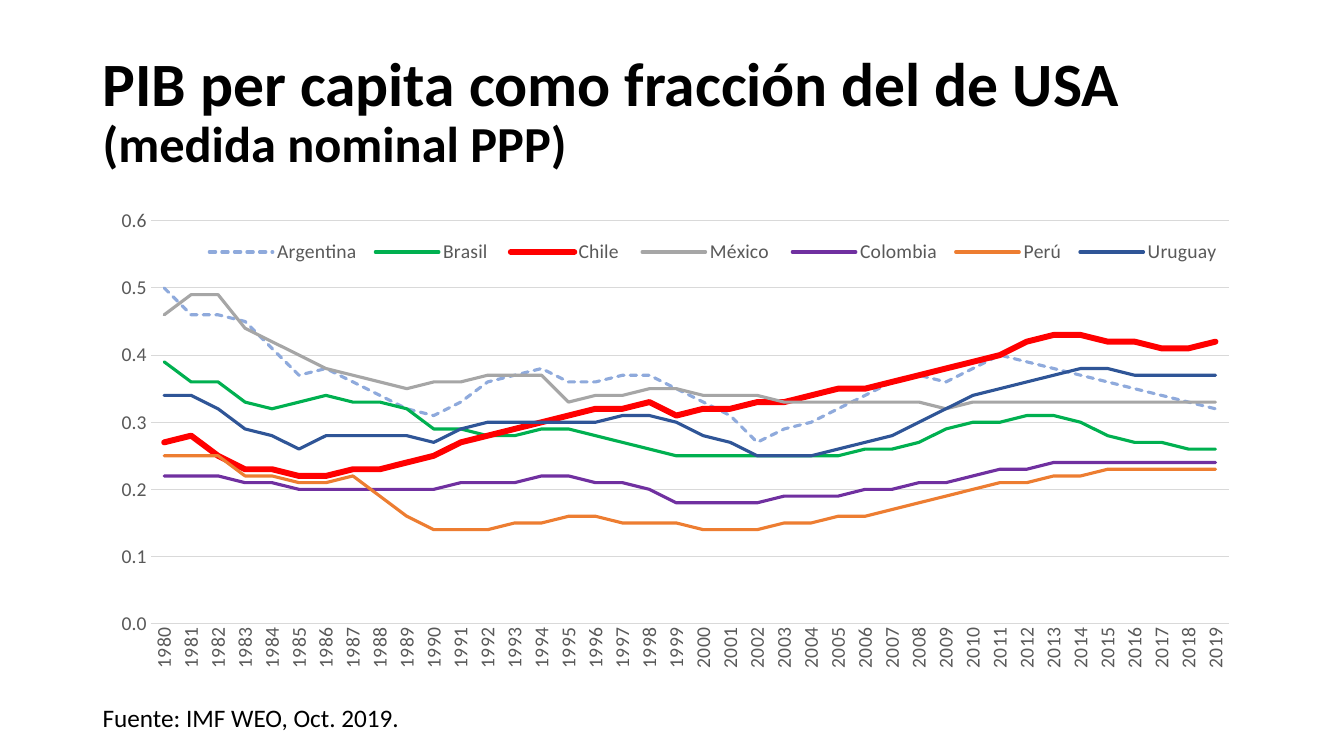
from lxml import etree
from pptx import Presentation
from pptx.chart.data import CategoryChartData
from pptx.dml.color import RGBColor
from pptx.enum.chart import XL_CHART_TYPE, XL_LEGEND_POSITION, XL_TICK_MARK
from pptx.enum.dml import MSO_LINE
from pptx.enum.text import MSO_ANCHOR, MSO_AUTO_SIZE
from pptx.oxml.ns import qn
from pptx.util import Inches, Pt

LINE = XL_CHART_TYPE.LINE
BOTTOM = XL_LEGEND_POSITION.BOTTOM
NO_TICK = XL_TICK_MARK.NONE
DASH = MSO_LINE.SQUARE_DOT
MIDDLE, TOP = MSO_ANCHOR.MIDDLE, MSO_ANCHOR.TOP
GROW = MSO_AUTO_SIZE.SHAPE_TO_FIT_TEXT

FONT = "Calibri"
BLACK, GREY, PALE = "000000", "595959", "D9D9D9"
TITLE = [("PIB per capita como fracción del de USA ", 44), ("(medida nominal PPP)", 36)]
SOURCE = [("Fuente: IMF WEO, Oct. 2019.", 18)]
FIRST, LAST, STEP = 1980, 2019, 3
THIN, THICK = 2.25, 4.25

SERIES = [
    ("Argentina", "8FAADC",
     [0.5, 0.45, 0.38, 0.32, 0.36, 0.36, 0.37, 0.31, 0.3, 0.36, 0.38, 0.38, 0.35, 0.32],
     {1981: 0.46, 1985: 0.37, 1990: 0.31, 1994: 0.38, 2002: 0.27, 2008: 0.37, 2009: 0.36, 2011: 0.4}),
    ("Brasil ", "00B050",
     [0.39, 0.33, 0.34, 0.32, 0.28, 0.29, 0.26, 0.25, 0.25, 0.26, 0.3, 0.31, 0.27, 0.26],
     {1981: 0.36, 1982: 0.36, 1984: 0.32, 1990: 0.29, 1999: 0.25}),
    ("Chile ", "FF0000",
     [0.27, 0.23, 0.22, 0.24, 0.28, 0.31, 0.33, 0.32, 0.34, 0.36, 0.39, 0.43, 0.42, 0.42],
     {1981: 0.28, 1982: 0.25, 1999: 0.31, 2017: 0.41}),
    ("México ", "A6A6A6",
     [0.46, 0.44, 0.38, 0.35, 0.37, 0.33, 0.35, 0.34, 0.33, 0.33, 0.33, 0.33, 0.33, 0.33],
     {1981: 0.49, 1982: 0.49, 1994: 0.37, 2009: 0.32}),
    ("Colombia", "7030A0",
     [0.22, 0.21, 0.2, 0.2, 0.21, 0.22, 0.2, 0.18, 0.19, 0.2, 0.22, 0.24, 0.24, 0.24],
     {1982: 0.22, 1999: 0.18}),
    ("Perú", "ED7D31",
     [0.25, 0.22, 0.21, 0.16, 0.14, 0.16, 0.15, 0.14, 0.15, 0.17, 0.2, 0.22, 0.23, 0.23],
     {1982: 0.25, 1987: 0.22, 1990: 0.14}),
    ("Uruguay", "2F5597",
     [0.34, 0.29, 0.28, 0.28, 0.3, 0.3, 0.31, 0.27, 0.25, 0.28, 0.34, 0.37, 0.37, 0.37],
     {1981: 0.34, 1985: 0.26, 1990: 0.27, 2002: 0.25, 2014: 0.38}),
]
DASHED, HIGHLIGHTED = "Argentina", "Chile "

WIDTH, HEIGHT = 13.33, 7.5
LEFT, BODY_WIDTH = 0.92, 11.5
PLOT_BOX = (0.05, 0.04, 0.93, 0.84)
LEGEND_BOX = (0.09, 0.07, 0.89, 0.07)


def rgb(value):
    return RGBColor.from_string(value)


def yearly(regular, turns):
    known = dict(zip(range(FIRST, LAST + 1, STEP), regular)) | turns
    values = []
    for year in range(FIRST, LAST + 1):
        before = max(y for y in known if y <= year)
        after = min(y for y in known if y >= year)
        share = (year - before) / max(after - before, 1)
        values.append(round(known[before] + share * (known[after] - known[before]), 2))
    return values


def style_font(font, size, color=GREY, bold=False):
    font.name, font.size, font.bold = FONT, Pt(size), bold
    font.color.rgb = rgb(color)


def style_line(line, color, width):
    line.color.rgb = rgb(color)
    line.width = Pt(width)


def add_text(slide, runs, box, bold=False, anchor=TOP, wrap=True, spacing=1.0, grow=False):
    tf = slide.shapes.add_textbox(*map(Inches, box)).text_frame
    tf.word_wrap = wrap
    tf.vertical_anchor = anchor
    if grow:
        tf.auto_size = GROW
    p = tf.paragraphs[0]
    p.line_spacing = spacing
    for text, size in runs:
        r = p.add_run()
        r.text = text
        style_font(r.font, size, BLACK, bold)


def place(parent, box, index, inner=False):
    for old in parent.findall(qn("c:layout")):
        parent.remove(old)
    layout = etree.Element(qn("c:layout"))
    manual = etree.SubElement(layout, qn("c:manualLayout"))
    settings = [("layoutTarget", "inner")] if inner else []
    settings += [("xMode", "edge"), ("yMode", "edge"), *zip("xywh", box)]
    for tag, value in settings:
        etree.SubElement(manual, qn("c:" + tag)).set("val", str(value))
    parent.insert(index, layout)


def add_line_chart(slide, box):
    data = CategoryChartData(number_format="0.00")
    data.categories = [str(year) for year in range(FIRST, LAST + 1)]
    for name, color, regular, turns in SERIES:
        data.add_series(name, yearly(regular, turns))
    chart = slide.shapes.add_chart(LINE, *map(Inches, box), data).chart
    chart.has_title = False
    style_font(chart.font, 14, BLACK)

    plot = chart.plots[0]
    plot.vary_by_categories = False
    for series, (name, color, regular, turns) in zip(plot.series, SERIES):
        series.smooth = False
        style_line(series.format.line, color, THICK if name == HIGHLIGHTED else THIN)
        if name == DASHED:
            series.format.line.dash_style = DASH
    root = chart.element
    for ln in root.iter(qn("a:ln")):
        ln.set("cap", "rnd")

    years, values = chart.category_axis, chart.value_axis
    for axis in (years, values):
        axis.major_tick_mark = axis.minor_tick_mark = NO_TICK
        style_font(axis.tick_labels.font, 14)
    style_line(years.format.line, PALE, 0.75)
    body = root.find(".//" + qn("c:catAx")).find(".//" + qn("a:bodyPr"))
    body.set("rot", "-5400000")
    body.set("vert", "horz")
    values.minimum_scale, values.maximum_scale, values.major_unit = 0, 0.6, 0.1
    values.tick_labels.number_format = "#,##0.0"
    values.tick_labels.number_format_is_linked = False
    values.format.line.fill.background()
    style_line(values.major_gridlines.format.line, PALE, 0.75)

    chart.has_legend = True
    chart.legend.position = BOTTOM
    chart.legend.include_in_layout = True
    style_font(chart.legend.font, 14)
    place(root.find(".//" + qn("c:plotArea")), PLOT_BOX, 0, inner=True)
    place(root.find(".//" + qn("c:legend")), LEGEND_BOX, 1)


def main():
    prs = Presentation()
    prs.slide_width, prs.slide_height = Inches(WIDTH), Inches(HEIGHT)
    slide = prs.slides.add_slide(prs.slide_layouts[6])
    add_text(slide, TITLE, (LEFT, 0.4, BODY_WIDTH, 1.45), bold=True, anchor=MIDDLE, spacing=0.9)
    add_line_chart(slide, (LEFT, 2, BODY_WIDTH, 4.76))
    add_text(slide, SOURCE, (LEFT, 6.92, 3.17, 0.4), wrap=False, grow=True)
    prs.save("out.pptx")


if __name__ == "__main__":
    main()
